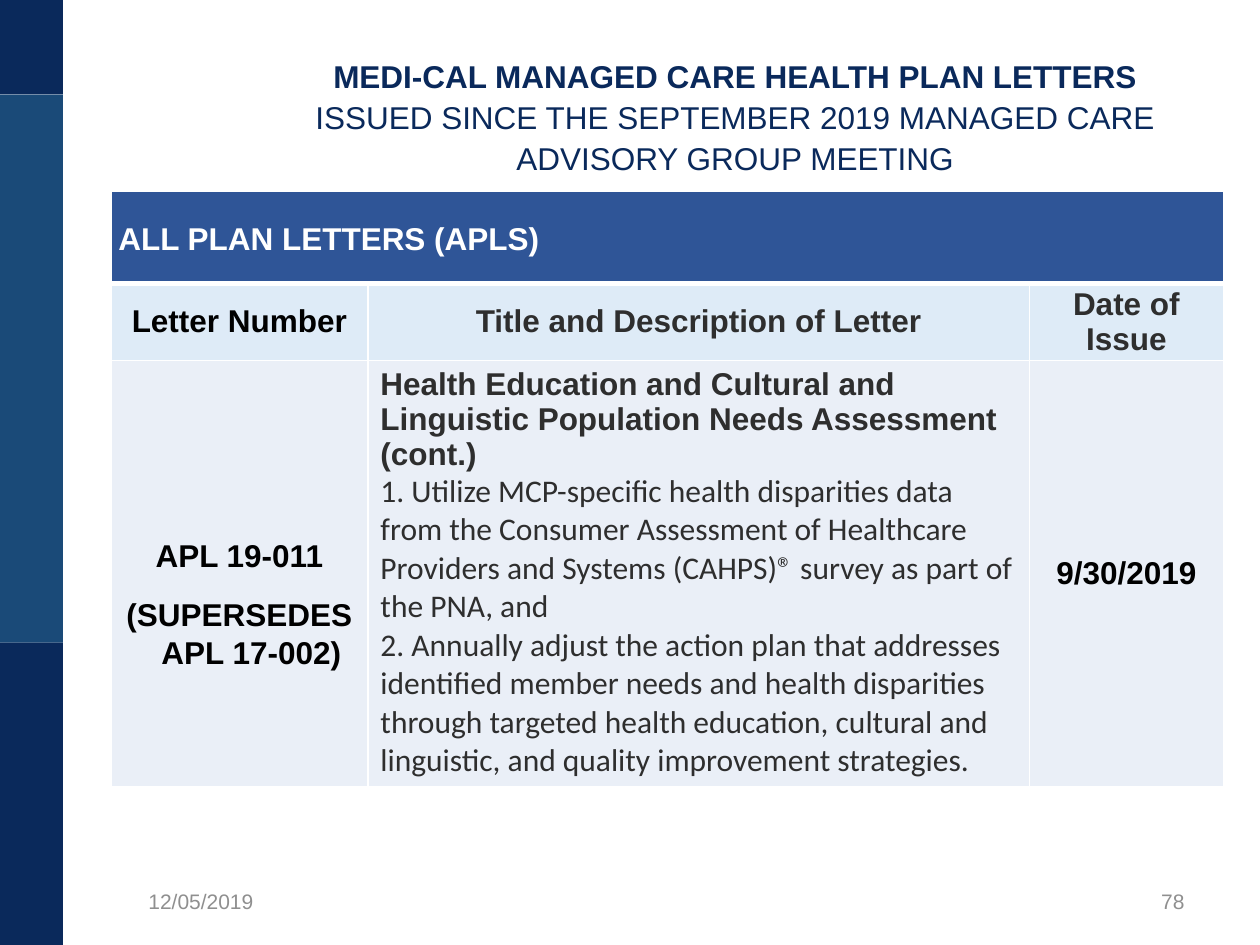
"""Build the slide listing Medi-Cal managed care health plan letters."""
from dataclasses import dataclass

from lxml.etree import SubElement
from pptx import Presentation
from pptx.dml.color import RGBColor as Color
from pptx.enum.shapes import MSO_SHAPE as Shape
from pptx.enum.text import MSO_ANCHOR as Anchor, PP_ALIGN as Align
from pptx.oxml.ns import qn
from pptx.util import Inches, Pt


@dataclass(frozen=True)
class Theme:
    navy: str = "0A295B"
    blue: str = "1A4A78"
    banner: str = "2F5597"
    heading: str = "DEEBF7"
    body: str = "EAEFF7"
    white: str = "FFFFFF"
    black: str = "000000"
    ink: str = "2E2E2E"
    gray: str = "8F8F8F"
    sans: str = "Arial"
    text: str = "Calibri"
    main_size: int = 18
    footer_size: int = 12


theme = Theme()


def format_runs(paragraph, color, bold=True, name=theme.sans, size=theme.main_size):
    for run in paragraph.runs:
        run.font.name, run.font.size, run.font.bold = name, Pt(size), bold
        run.font.color.rgb = Color.from_string(color)


def add_borders(cell, widths):
    properties = cell._tc.get_or_add_tcPr()
    for position, (side, width) in enumerate(zip("LRTB", widths)):
        line = SubElement(properties, qn(f"a:ln{side}"), w=str(Pt(width)))
        fill = SubElement(line, qn("a:solidFill"))
        SubElement(fill, qn("a:srgbClr"), val=theme.white)
        properties.insert(position, line)


presentation = Presentation()
presentation.slide_width, presentation.slide_height = Inches(10), Inches(7.5)
width, height = presentation.slide_width, presentation.slide_height
slide = presentation.slides.add_slide(presentation.slide_layouts[5])

bands = [(0, 0.1, theme.navy), (0.1, 0.68, theme.blue), (0.68, 1, theme.navy)]
for top, bottom, color in bands:
    band = slide.shapes.add_shape(
        Shape.RECTANGLE, 0, int(top * height), int(0.05 * width), int((bottom - top) * height)
    )
    band.shadow.inherit = False
    band.fill.solid()
    band.fill.fore_color.rgb = Color.from_string(color)
    band.line.fill.background()

title = slide.shapes.title
title.left, title.top, title.width, title.height = map(Inches, (1.96, 0.29, 7.75, 1.25))
title.text_frame.vertical_anchor = Anchor.MIDDLE
title.text_frame.word_wrap = True
paragraph = title.text_frame.paragraphs[0]
paragraph.text = (
    "MEDI-CAL MANAGED CARE HEALTH PLAN LETTERS\v"
    "ISSUED SINCE THE SEPTEMBER 2019 MANAGED CARE ADVISORY GROUP MEETING"
)
paragraph.alignment = Align.CENTER
paragraph.line_spacing = 1.08
format_runs(paragraph, theme.navy)
paragraph.runs[1].font.bold = False

columns, rows = (2.04, 5.25, 1.54), (0.73, 0.61, 3.38)
table = slide.shapes.add_table(
    len(rows), len(columns), Inches(0.88), Inches(1.52), Inches(sum(columns)), Inches(sum(rows))
).table
table.first_row = table.horz_banding = False
for column, size in zip(table.columns, columns):
    column.width = Inches(size)
for row, size in zip(table.rows, rows):
    row.height = Inches(size)
table.cell(0, 0).merge(table.cell(0, 2))

contents = [
    [("ALL PLAN LETTERS (APLS)", theme.white), ("", theme.white), ("", theme.white)],
    [
        ("Letter Number", theme.black),
        ("Title and Description of Letter", theme.ink),
        ("Date of Issue", theme.ink),
    ],
    [
        ("APL 19-011\n(SUPERSEDES APL 17-002)", theme.black),
        (
            "Health Education and Cultural and Linguistic Population Needs Assessment (cont.)\n"
            "1. Utilize MCP-specific health disparities data from the Consumer Assessment of "
            "Healthcare Providers and Systems (CAHPS)® survey as part of the PNA, and\n"
            "2. Annually adjust the action plan that addresses identified member needs and health "
            "disparities through targeted health education, cultural and linguistic, and quality "
            "improvement strategies.",
            theme.ink,
        ),
        ("9/30/2019", theme.black),
    ],
]
fills = (theme.banner, theme.heading, theme.body)
borders = ((1, 1, 1, 3), (1, 1, 3, 1), (1, 1, 1, 1))
margins = ((0.06, 0), (0.06, 0), (0.1, 0.05))
for row, values in enumerate(contents):
    for column, (text, color) in enumerate(values):
        cell = table.cell(row, column)
        cell.fill.solid()
        cell.fill.fore_color.rgb = Color.from_string(fills[row])
        add_borders(cell, borders[row])
        side, edge = margins[row]
        cell.margin_left = cell.margin_right = Inches(side)
        cell.margin_top = cell.margin_bottom = Inches(edge)
        cell.vertical_anchor = Anchor.MIDDLE
        if not text:
            continue
        cell.text_frame.text = text
        left_aligned = row == 0 or (row == 2 and column == 1)
        for paragraph in cell.text_frame.paragraphs:
            paragraph.alignment = Align.LEFT if left_aligned else Align.CENTER
            format_runs(paragraph, color)

table.cell(0, 0).margin_top = Inches(0.04)
for paragraph in table.cell(2, 1).text_frame.paragraphs[1:]:
    format_runs(paragraph, theme.ink, bold=False, name=theme.text)

letter = table.cell(2, 0)
letter.margin_top = Inches(0.53)
number, superseded = letter.text_frame.paragraphs
number.space_after = Pt(12)
number.line_spacing = superseded.line_spacing = 1.08
hanging = Inches(0.19)
superseded._p.get_or_add_pPr().set("marL", str(hanging))
superseded._p.get_or_add_pPr().set("indent", str(-hanging))

footers = [("12/05/2019", 1.08, Align.LEFT), ("78", 7.17, Align.RIGHT)]
for text, left, alignment in footers:
    footer = slide.shapes.add_textbox(Inches(left), Inches(6.95), Inches(2.33), Inches(0.4))
    footer.text_frame.word_wrap = True
    footer.text_frame.vertical_anchor = Anchor.MIDDLE
    footer.text_frame.text = text
    paragraph = footer.text_frame.paragraphs[0]
    paragraph.alignment = alignment
    format_runs(paragraph, theme.gray, bold=False, size=theme.footer_size)

presentation.save("out.pptx")
